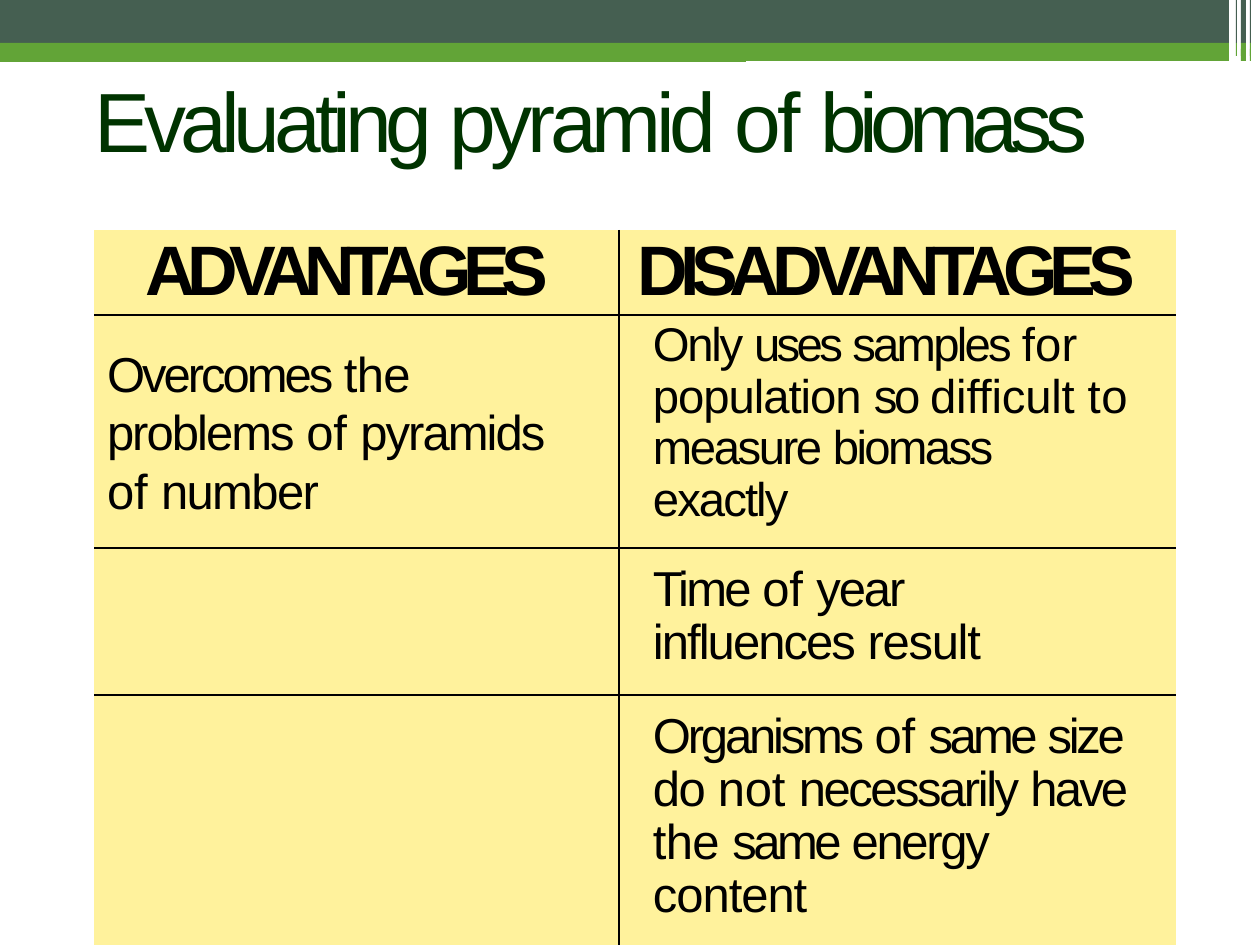
from typing import NamedTuple

from lxml.etree import SubElement
from pptx import Presentation
from pptx.dml.color import RGBColor
from pptx.enum.shapes import MSO_CONNECTOR as Connector, MSO_SHAPE as Shape
from pptx.enum.text import MSO_ANCHOR as Anchor, MSO_AUTO_SIZE as AutoSize, PP_ALIGN as Align
from pptx.oxml.ns import qn
from pptx.util import Emu, Pt

PX = 914400 // 126
SLATE = RGBColor(0x45, 0x5F, 0x51)
GREEN = RGBColor(0x62, 0xA4, 0x37)
DARK_GREEN = RGBColor(0x00, 0x33, 0x00)
CREAM = RGBColor(0xFF, 0xF2, 0x9C)
BLACK = RGBColor(0, 0, 0)


class Bar(NamedTuple):
    left: int
    top: int
    width: int
    height: int
    color: RGBColor


class Entry(NamedTuple):
    """A table cell: runs are (text, letter spacing in points)."""
    row: int
    column: int
    runs: list
    size: int
    left: int
    top: int = 0
    right: int = 0
    spacing: object = 0.97
    bold: bool = False


# Four columns of the header band, repeated in each of its layers
STRIPES = [(0, 1229), (1236, 1), (1241, 5), (1250, 1)]
LOWER_STRIPES = [(746, 483), *STRIPES[2:]]
BARS = (
    [Bar(x, 0, w, 43, SLATE) for x, w in STRIPES]
    + [Bar(x, 43, w, 13, GREEN) for x, w in STRIPES]
    + [Bar(x, 49, w, 12, GREEN) for x, w in LOWER_STRIPES]
)

TITLE = [("Evaluating ", -3.5), ("pyramid ", -3), ("of ", -2.2), ("biomass", -4.4)]
COLUMN_WIDTHS = [525, 557]
ROW_HEIGHTS = [85, 233, 147, 250]
ENTRIES = [
    Entry(0, 0, [("ADVANTAGES", -4.9)], 40, 52, spacing=Pt(46), bold=True),
    Entry(0, 1, [("DISADVANTAGES", -4.7)], 40, 19, spacing=Pt(46), bold=True),
    Entry(1, 0, [("Overcomes ", -1.7), ("the ", -0.4), ("problems ", -1.1), ("of ", -0.1),
                 ("pyramids ", -1.1), ("of ", -0.1), ("number", -0.9)],
          28, 13, 29, 40, Pt(33.5)),
    Entry(1, 1, [("Only ", -1.3), ("uses ", -2.1), ("samples ", -1.6), ("for ", 0.1),
                 ("population ", -0.6), ("so ", -1.9), ("difficult ", -0.1), ("to ", 0.3),
                 ("measure ", -1.4), ("biomass ", -1.5), ("exactly", -1.1)],
          27, 34, 6, 40),
    Entry(2, 1, [("Time ", -1.6), ("of ", -0.1), ("year ", -1.2), ("influences ", -1.1),
                 ("result", -0.7)],
          28, 34, 16, 90),
    Entry(3, 1, [("Organisms ", -1.8), ("of ", -0.1), ("same ", -2), ("size ", -1.9),
                 ("do ", -0.9), ("not ", -0.1), ("necessarily ", -1.4), ("have ", -1.6),
                 ("the ", -0.4), ("same ", -2), ("energy ", -1.3), ("content", -0.6)],
          28, 34, 16, 40),
]


def px(length: int) -> Emu:
    return Emu(length * PX)


def apply(target, formats: dict) -> None:
    for name, value in formats.items():
        setattr(target, name, value)


def write_runs(paragraph, runs: list, size: int, color: RGBColor, bold: bool = False) -> None:
    for text, tracking in runs:
        run = paragraph.add_run()
        run.text = text
        apply(run.font, {"name": "Arial", "size": Pt(size), "bold": bold})
        run.font.color.rgb = color
        run.font._element.set("spc", str(round(tracking * 100)))


def draw_bar(slide, bar: Bar) -> None:
    shape = slide.shapes.add_shape(Shape.RECTANGLE, *map(px, bar[:4]))
    shape.shadow.inherit = False
    shape.fill.solid()
    shape.fill.fore_color.rgb = bar.color
    shape.line.fill.background()


def draw_band_edge(slide) -> None:
    edge = slide.shapes.add_connector(Connector.STRAIGHT, 0, px(58), px(746), px(58))
    edge.line.color.rgb = GREEN
    edge.line.width = Pt(4.08)
    SubElement(edge._element.spPr, qn("a:effectLst"))


def draw_title(slide) -> None:
    title = slide.shapes.title
    apply(title, {"left": px(94), "top": px(68), "width": px(1074), "height": px(104)})
    frame = title.text_frame
    apply(frame, {"margin_left": px(1), "margin_top": px(1), "margin_right": 0,
                  "margin_bottom": 0, "vertical_anchor": Anchor.TOP,
                  "word_wrap": True, "auto_size": AutoSize.NONE})
    frame.paragraphs[0].alignment = Align.LEFT
    write_runs(frame.paragraphs[0], TITLE, 48, DARK_GREEN)


def style_cell(cell, inner_sides: dict) -> None:
    """Fill the cell and rule only the sides that lie inside the table."""
    properties = cell._tc.get_or_add_tcPr()
    for side, is_inner in inner_sides.items():
        border = SubElement(properties, qn(f"a:{side}"), w=str(Pt(1.5)))
        if is_inner:
            fill = SubElement(border, qn("a:solidFill"))
            SubElement(fill, qn("a:srgbClr"), val=str(BLACK))
        else:
            SubElement(border, qn("a:noFill"))
    cell.fill.solid()
    cell.fill.fore_color.rgb = CREAM


def write_entry(cell, entry: Entry) -> None:
    apply(cell, {"margin_left": px(entry.left), "margin_top": px(entry.top),
                 "margin_right": px(entry.right), "margin_bottom": 0,
                 "vertical_anchor": Anchor.TOP})
    paragraph = cell.text_frame.paragraphs[0]
    paragraph.line_spacing = entry.spacing
    write_runs(paragraph, entry.runs, entry.size, BLACK, entry.bold)


def draw_table(slide) -> None:
    last_row, last_column = len(ROW_HEIGHTS) - 1, len(COLUMN_WIDTHS) - 1
    table = slide.shapes.add_table(
        last_row + 1, last_column + 1, px(94), px(230),
        px(sum(COLUMN_WIDTHS)), px(sum(ROW_HEIGHTS))).table
    apply(table, {"first_row": False, "horz_banding": False})
    for column, width in zip(table.columns, COLUMN_WIDTHS):
        column.width = px(width)
    for r, height in enumerate(ROW_HEIGHTS):
        table.rows[r].height = px(height)
        for c in range(last_column + 1):
            style_cell(table.cell(r, c), {"lnL": c > 0, "lnR": c < last_column,
                                          "lnT": r > 0, "lnB": r < last_row})
    for entry in ENTRIES:
        write_entry(table.cell(entry.row, entry.column), entry)


def main() -> None:
    deck = Presentation()
    apply(deck, {"slide_width": px(1260), "slide_height": px(945)})
    slide = deck.slides.add_slide(deck.slide_layouts[5])
    # Header band
    draw_band_edge(slide)
    for bar in BARS:
        draw_bar(slide, bar)
    # Title and comparison
    draw_title(slide)
    draw_table(slide)
    deck.save("out.pptx")


if __name__ == "__main__":
    main()
